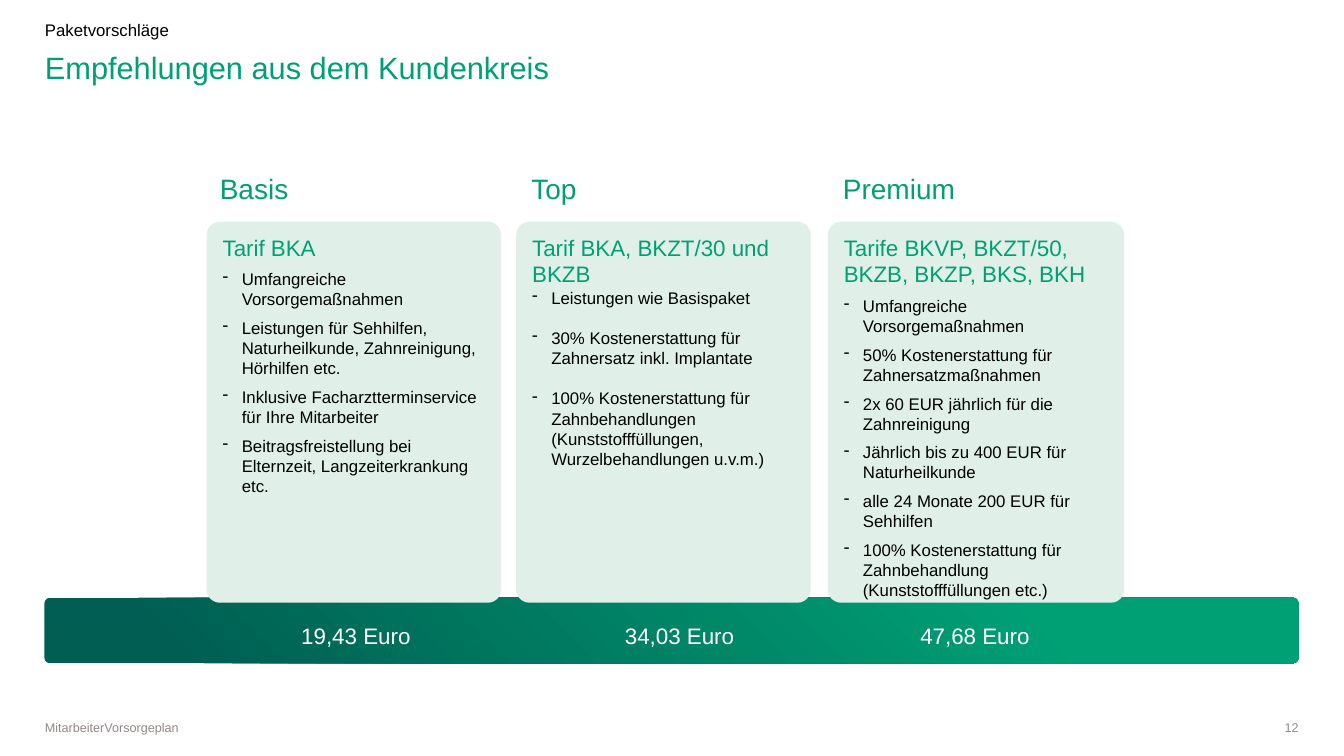
from dataclasses import dataclass

from lxml import etree
from pptx import Presentation
from pptx import util as u
from pptx.dml.color import RGBColor
from pptx.enum import shapes, text
from pptx.oxml.ns import qn

GREEN = RGBColor(0x00, 0xA0, 0x75)
DARK_GREEN = RGBColor(0x00, 0x5E, 0x52)
MINT = RGBColor(0xE0, 0xF0, 0xE8)
GREY = RGBColor(0x91, 0x8A, 0x87)
BLACK = RGBColor(0x00, 0x00, 0x00)
WHITE = RGBColor(0xFF, 0xFF, 0xFF)

WIDTH, HEIGHT = u.Inches(13.33), u.Inches(7.5)
MARGIN, CONTENT_WIDTH = 3.34, 93.32
HEADING_LEFT, HEADING_PITCH = 16.35, 23.18
BULLET_INDENT = u.Inches(0.19)
LEFT, CENTER, RIGHT = text.PP_ALIGN.LEFT, text.PP_ALIGN.CENTER, text.PP_ALIGN.RIGHT
TOP, BOTTOM = text.MSO_ANCHOR.TOP, text.MSO_ANCHOR.BOTTOM


@dataclass(frozen=True)
class Box:
    """Place on the slide, in percent of its width and height."""
    left: float
    top: float
    width: float
    height: float

    def emu(self) -> tuple[int, int, int, int]:
        return (int(WIDTH * self.left / 100), int(HEIGHT * self.top / 100),
                int(WIDTH * self.width / 100), int(HEIGHT * self.height / 100))


@dataclass(frozen=True)
class Package:
    name: str
    tariff: str
    benefits: list[str]
    price: str
    card_left: float
    card_width: float
    price_left: float
    first_gap: float = 6
    gap: float = 6


@dataclass(frozen=True)
class Label:
    words: str
    box: Box
    size: float
    color: RGBColor
    align: text.PP_ALIGN = LEFT
    anchor: text.MSO_ANCHOR = TOP
    spacing: float = 1.0
    inset: tuple[float, float] = (0, 0)
    wrap: bool = True


PACKAGES = [
    Package("Basis", "Tarif BKA", [
        "Umfangreiche Vorsorgemaßnahmen",
        "Leistungen für Sehhilfen, Naturheilkunde, Zahnreinigung, Hörhilfen etc.",
        "Inklusive Facharztterminservice für Ihre Mitarbeiter",
        "Beitragsfreistellung bei Elternzeit, Langzeiterkrankung etc.",
    ], "19,43 Euro", 15.38, 21.91, 21.53),
    Package("Top", "Tarif BKA, BKZT/30 und BKZB", [
        "Leistungen wie Basispaket",
        "30% Kostenerstattung für Zahnersatz inkl. Implantate",
        "100% Kostenerstattung für Zahnbehandlungen "
        "(Kunststofffüllungen, Wurzelbehandlungen u.v.m.)",
    ], "34,03 Euro", 38.41, 21.91, 45.61, first_gap=0, gap=14.4),
    Package("Premium", "Tarife BKVP, BKZT/50, BKZB, BKZP, BKS, BKH", [
        "Umfangreiche Vorsorgemaßnahmen",
        "50% Kostenerstattung für Zahnersatzmaßnahmen",
        "2x 60 EUR jährlich für die Zahnreinigung",
        "Jährlich bis zu 400 EUR für Naturheilkunde",
        "alle 24 Monate 200 EUR für Sehhilfen",
        "100% Kostenerstattung für Zahnbehandlung (Kunststofffüllungen etc.)",
    ], "47,68 Euro", 61.59, 22.06, 67.59),
]


def apply(target, formats: dict) -> None:
    for name, value in formats.items():
        setattr(target, name, value)


def format_frame(tf, anchor, inset: tuple[float, float], wrap: bool = True) -> None:
    across, down = (u.Inches(side) for side in inset)
    apply(tf, {"word_wrap": wrap, "auto_size": text.MSO_AUTO_SIZE.NONE,
               "vertical_anchor": anchor, "margin_left": across,
               "margin_right": across, "margin_top": down, "margin_bottom": down})


def write(p, words: str, size: float, color: RGBColor, **formats) -> None:
    apply(p, formats)
    r = p.add_run()
    r.text = words
    apply(r.font, {"name": "Arial", "size": u.Pt(size), "bold": False})
    r.font.color.rgb = color


def add_dash(p) -> None:
    """Give the paragraph a hanging dash as its bullet."""
    pPr = p._p.get_or_add_pPr()
    pPr.set("marL", str(BULLET_INDENT))
    pPr.set("indent", str(-BULLET_INDENT))
    etree.SubElement(pPr, qn("a:buChar")).set("char", "-")


def fill_label(sp, label: Label) -> None:
    format_frame(sp.text_frame, label.anchor, label.inset, label.wrap)
    write(sp.text_frame.paragraphs[0], label.words, label.size, label.color,
          alignment=label.align, line_spacing=label.spacing)


def add_label(s, label: Label) -> None:
    fill_label(s.shapes.add_textbox(*label.box.emu()), label)


def add_rounded(s, box: Box, rounding: float):
    sp = s.shapes.add_shape(shapes.MSO_SHAPE.ROUNDED_RECTANGLE, *box.emu())
    sp.adjustments[0] = rounding
    sp.shadow.inherit = False
    sp.line.fill.background()
    return sp


def add_price_bar(s) -> None:
    fill = add_rounded(s, Box(3.3, 79.07, CONTENT_WIDTH, 8.67), 0.09).fill
    fill.gradient()
    fill.gradient_angle = 45
    for stop, position, color in zip(fill.gradient_stops, (0.1, 0.8), (DARK_GREEN, GREEN)):
        stop.position = position
        stop.color.rgb = color


def add_card(s, package: Package) -> None:
    sp = add_rounded(s, Box(package.card_left, 29.33, package.card_width, 50.4), 0.045)
    sp.fill.solid()
    sp.fill.fore_color.rgb = MINT
    tf = sp.text_frame
    format_frame(tf, TOP, (0.12, 0.08))
    layout = {"alignment": LEFT, "line_spacing": 1.0}
    write(tf.paragraphs[0], package.tariff, 16, GREEN, **layout)
    for i, benefit in enumerate(package.benefits):
        p = tf.add_paragraph()
        add_dash(p)
        gap = package.gap if i else package.first_gap
        write(p, benefit, 12, BLACK, space_before=u.Pt(gap), **layout)


def add_title(s) -> None:
    label = Label("Empfehlungen aus dem Kundenkreis",
                  Box(MARGIN, 7.05, CONTENT_WIDTH, 10.4), 22, GREEN, spacing=0.9)
    sp = s.shapes.title
    apply(sp, dict(zip(("left", "top", "width", "height"), label.box.emu())))
    fill_label(sp, label)


def main() -> None:
    prs = Presentation()
    prs.slide_width, prs.slide_height = WIDTH, HEIGHT
    s = prs.slides.add_slide(prs.slide_layouts[5])
    add_title(s)
    add_label(s, Label("Paketvorschläge", Box(MARGIN, 2.9, 62.64, 2.13), 12, BLACK, spacing=0.9))
    add_price_bar(s)
    for i, package in enumerate(PACKAGES):
        add_card(s, package)
        heading = Box(HEADING_LEFT + i * HEADING_PITCH, 22.27, 22.06, 4.93)
        add_label(s, Label(package.name, heading, 20, GREEN, spacing=1.1))
        add_label(s, Label(package.price, Box(package.price_left, 81.6, 9.9, 4.93), 16, WHITE,
                           align=CENTER, inset=(0.1, 0.05), wrap=False))
    add_label(s, Label("MitarbeiterVorsorgeplan", Box(MARGIN, 95.47, 38.41, 1.73), 9, GREY,
                       anchor=BOTTOM))
    add_label(s, Label("12", Box(92.8, 95.47, 3.83, 1.73), 9, GREY, align=RIGHT, anchor=BOTTOM))
    prs.save("out.pptx")


if __name__ == "__main__":
    main()
